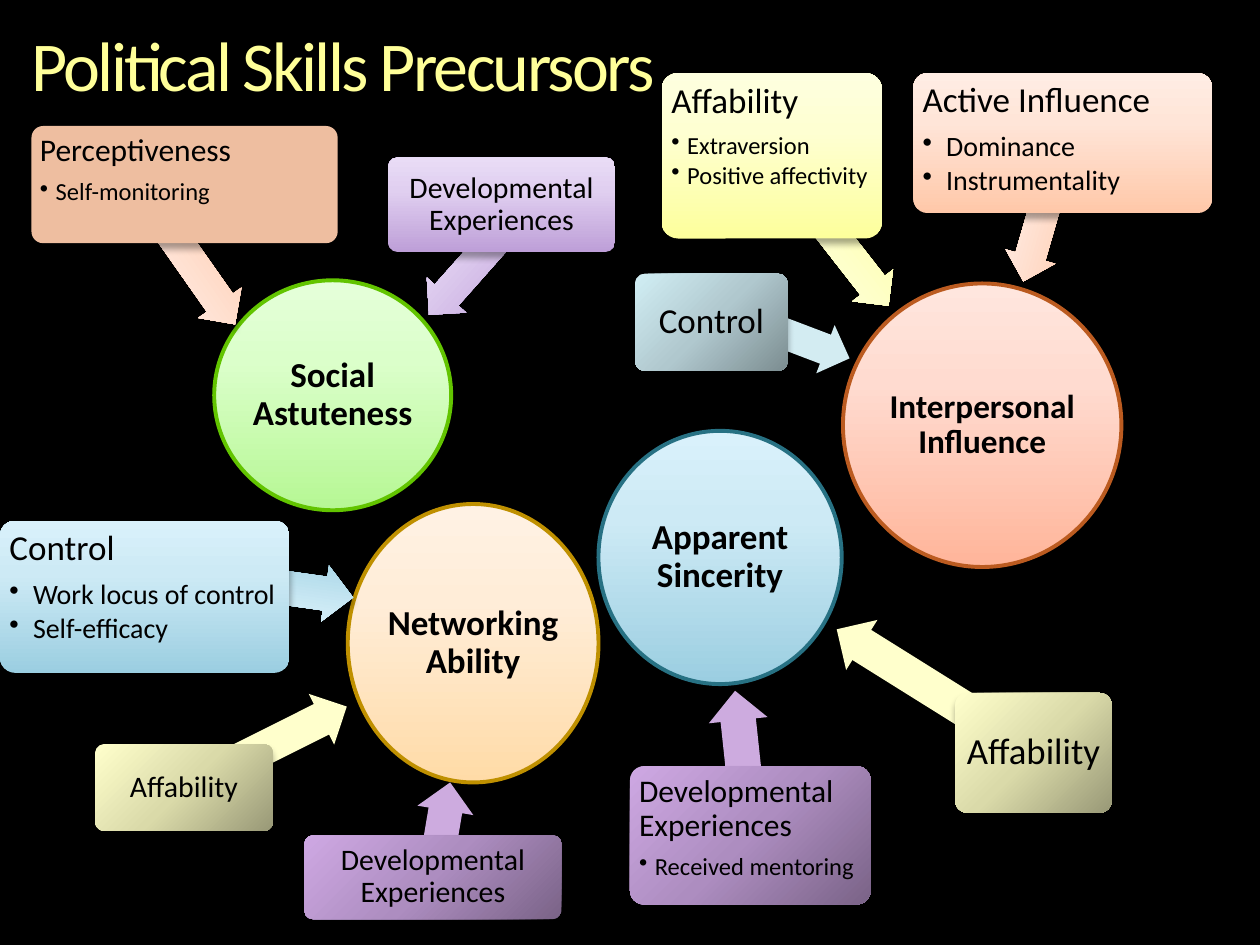
from lxml import etree
from pptx import Presentation, util as u
from pptx.dml.color import RGBColor
from pptx.enum import shapes, text
from pptx.oxml.ns import qn

COLORS = {
    "background": "000000", "title": "FFFF99", "ink": "000000",
    "amber": "FFDBA7 FFEDD8 FFF2E4", "amber edge": "BF9000",
    "coral": "FFB59A FFDBD0 FFE6DE", "coral edge": "BB5B20",
    "blue": "9BCEE1 CDEAF5 D9F1FB", "blue edge": "277183",
    "green": "B6F794 DBFFCA E5FFDA", "green edge": "62C400",
    "yellow": "FDFF9C FEFFD2 FEFFDF", "peach": "FFC8A9 FFE5D8 FFEDE4",
    "violet": "BE9FD8 E0CFF0 E9DCF6", "plum": "7A6387 AD8DC0 CEA8E3",
    "khaki": "999977 DADAA9 FFFFCC", "slate": "7C8D91 B0C8CE D1EEF4",
    "cream": "FFFFCC", "lilac": "CDABDF", "ice": "D3ECF2", "tan": "EEBEA0",
}
GRADIENTS = {"rise": (65, 270), "diagonal": (50, 225), "corner": (50, None)}

TITLE = ("Political Skills Precursors", (18, 18, 378, 44))
SKILLS = [
    dict(name="Networking Ability", box=(198.7, 288, 143.3, 159.1), size=20, color="amber", precursors=[
        dict(name="Control", box=(0, 297.5, 165.4, 87), size=20, color="blue",
             traits=["Work locus of control", "Self-efficacy"], trait_size=16, indent=13.5,
             arrow=(91.4, 317.5, 110.9, 32.4), turn=188, arrow_color="blue"),
        dict(name="Affability", box=(54.4, 425.3, 101.5, 49.5), size=17, color="khaki", gradient="corner",
             arrow=(98.6, 411.1, 105.1, 32.4), turn=153.4, arrow_color="cream"),
        dict(name="Developmental Experiences", box=(174, 477.4, 146.9, 47.8), size=17, color="plum",
             gradient="diagonal", arrow=(226.1, 457.2, 53.3, 32.4), turn=99.6, arrow_color="lilac"),
    ]),
    dict(name="Interpersonal Influence", box=(481.7, 162, 159.1, 162), size=19, color="coral", precursors=[
        dict(name="Control", box=(362.9, 156.4, 87.3, 55.6), size=20, color="slate", gradient="corner",
             arrow=(407.5, 175.7, 80.6, 29.5), turn=200.8, arrow_color="ice"),
        dict(name="Affability", box=(378, 41.8, 126, 94.5), size=20, color="yellow",
             traits=["Extraversion", "Positive affectivity"], trait_size=14, indent=9,
             arrow=(420.5, 117.4, 108, 29.5), turn=232, arrow_color="yellow"),
        dict(name="Active Influence", box=(522, 41.8, 170.6, 79.9), size=20, color="peach",
             traits=["Dominance", "Instrumentality"], trait_size=16, indent=13.5,
             arrow=(555.1, 106.6, 82.1, 29.5), turn=286.1, arrow_color="peach"),
    ]),
    dict(name="Apparent Sincerity", box=(342, 246.2, 139, 144.7), size=20, color="blue", precursors=[
        dict(name="Developmental Experiences", box=(360, 437.8, 137.5, 79), size=18, color="plum",
             gradient="corner", traits=["Received mentoring"], trait_size=14, indent=9,
             arrow=(383, 419, 82.8, 33.8), turn=83.9, arrow_color="lilac"),
        dict(name="Affability", box=(545.8, 396, 89.5, 68.4), size=21, color="khaki", gradient="corner",
             arrow=(468, 378, 133.2, 33.8), turn=32, arrow_color="cream"),
    ]),
    dict(name="Social Astuteness", box=(122.4, 160.2, 135.4, 131.4), size=20, color="green", precursors=[
        dict(name="Perceptiveness", box=(18, 72, 175, 67), size=18, color="tan",
             traits=["Self-monitoring"], trait_size=14, indent=9,
             arrow=(74.2, 139, 76.3, 30.2), turn=234.9, arrow_color="peach"),
        dict(name="Developmental Experiences", box=(221.8, 90, 129.6, 54), size=17, color="violet",
             arrow=(232.6, 136.8, 74.9, 30.2), turn=311.6, arrow_color="violet"),
    ]),
]


def rgb(name):
    return RGBColor.from_string(COLORS[name])


def add(parent, tag, **attributes):
    return etree.SubElement(parent, qn(tag), {key: str(value) for key, value in attributes.items()})


def paint(shape, color, gradient):
    stops = COLORS[color].split()
    if len(stops) == 1:
        shape.fill.solid()
        shape.fill.fore_color.rgb = rgb(color)
        return
    middle, angle = GRADIENTS[gradient]
    shape.fill.gradient()
    grad = shape._element.spPr.find(qn("a:gradFill"))
    for child in list(grad):
        grad.remove(child)
    stop_list = add(grad, "a:gsLst")
    for position, value in zip((0, middle, 100), stops):
        add(add(stop_list, "a:gs", pos=position * 1000), "a:srgbClr", val=value)
    if angle is None:
        add(add(grad, "a:path", path="circle"), "a:fillToRect", l=100000, t=100000)
    else:
        add(grad, "a:lin", ang=angle * 60000, scaled=0)


def draw(kind, box, color, gradient="rise", edge=None, adjust=(), turn=0):
    shape = slide.shapes.add_shape(kind, *map(u.Pt, box))
    for index, value in enumerate(adjust):
        shape.adjustments[index] = value
    shape.rotation = turn
    paint(shape, color, gradient)
    if edge:
        shape.line.color.rgb = rgb(edge)
        shape.line.width = u.Pt(2.25)
    else:
        shape.line.fill.background()
    shape.shadow.inherit = False
    effects = shape._element.spPr.find(qn("a:effectLst"))
    shadow = add(effects, "a:outerShdw", blurRad=u.Pt(4), dist=u.Pt(3), dir=90 * 60000, rotWithShape=0)
    add(add(shadow, "a:srgbClr", val="000000"), "a:alpha", val=35000)
    return shape


def write(shape, heading, size, color="ink", bold=False, centred=True, inset=2.9,
          spacing=0, traits=(), trait_size=0, indent=0):
    frame = shape.text_frame
    frame.word_wrap = True
    frame.margin_left = frame.margin_right = frame.margin_top = frame.margin_bottom = u.Pt(inset)
    frame.vertical_anchor = text.MSO_ANCHOR.MIDDLE if centred else text.MSO_ANCHOR.TOP
    for index, line in enumerate([heading, *traits]):
        paragraph = frame.add_paragraph() if index else frame.paragraphs[0]
        line_size = trait_size if index else size
        if index:
            paragraph.level = 1
            props = paragraph._p.get_or_add_pPr()
            props.set("marL", str(u.Pt(indent)))
            props.set("indent", str(-u.Pt(indent)))
            add(props, "a:buChar", char="•")
        paragraph.alignment = text.PP_ALIGN.CENTER if centred else text.PP_ALIGN.LEFT
        paragraph.line_spacing = 0.9
        if traits:
            paragraph.space_after = u.Pt(line_size * (0.15 if index else 0.35))
        run = paragraph.add_run()
        run.text = line
        run.font.name = "Calibri"
        run.font.size = u.Pt(line_size)
        run.font.bold = bold
        run.font.color.rgb = rgb(color)
        if spacing:
            run._r.get_or_add_rPr().set("spc", str(int(spacing * 100)))


deck = Presentation()
deck.slide_width, deck.slide_height = u.Pt(720), u.Pt(540)
slide = deck.slides.add_slide(deck.slide_layouts[6])
slide.background.fill.solid()
slide.background.fill.fore_color.rgb = rgb("background")

heading, heading_box = TITLE
write(slide.shapes.add_textbox(*map(u.Pt, heading_box)), heading, 40, color="title",
      centred=False, inset=0, spacing=-1.5)

for skill in SKILLS:
    circle = draw(shapes.MSO_SHAPE.OVAL, skill["box"], skill["color"], edge=skill["color"] + " edge")
    write(circle, skill["name"], skill["size"], bold=True, inset=0.9)
    for precursor in skill["precursors"]:
        draw(shapes.MSO_SHAPE.LEFT_ARROW, precursor["arrow"], precursor["arrow_color"],
             adjust=(0.6, 0.5), turn=precursor["turn"])
        card = draw(shapes.MSO_SHAPE.ROUNDED_RECTANGLE, precursor["box"], precursor["color"],
                    gradient=precursor.get("gradient", "rise"), adjust=(0.1,))
        traits = precursor.get("traits", ())
        write(card, precursor["name"], precursor["size"], centred=not traits, traits=traits,
              trait_size=precursor.get("trait_size", 0), indent=precursor.get("indent", 0))

deck.save("out.pptx")
